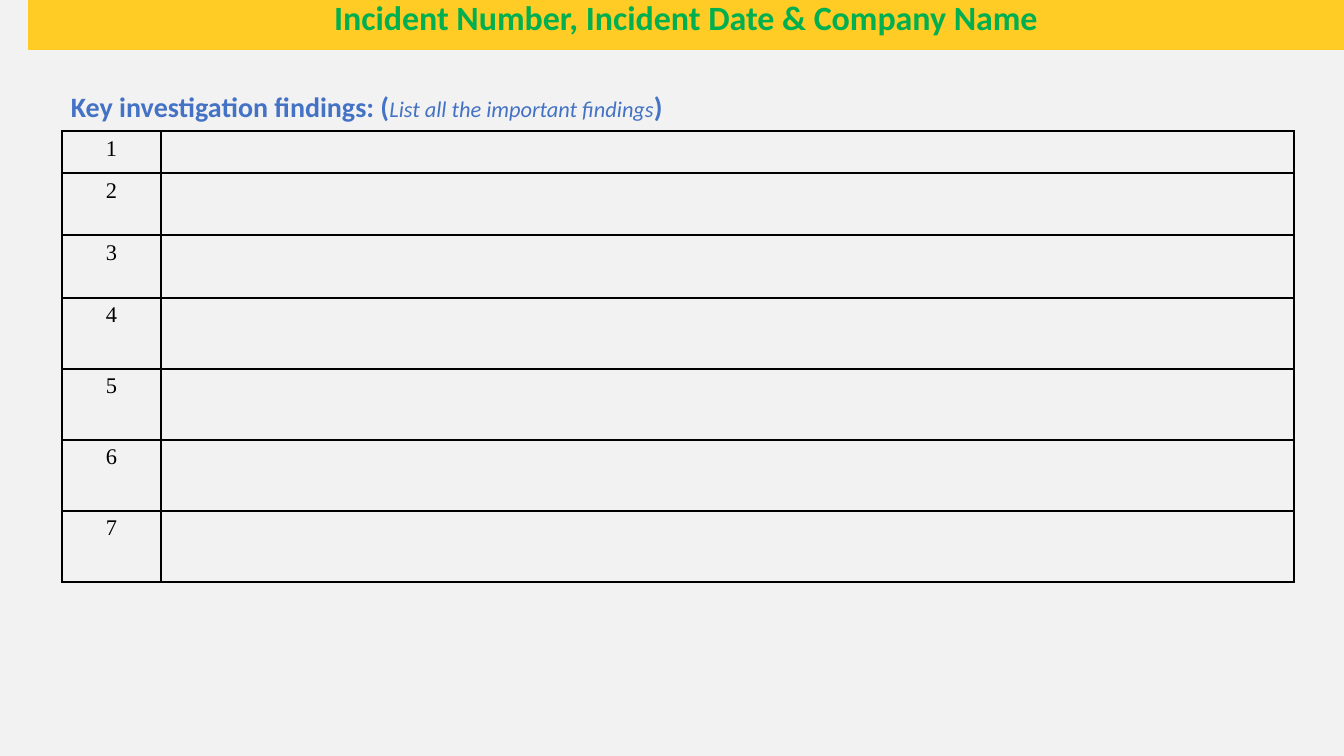
from lxml.etree import SubElement
from pptx import Presentation
from pptx.dml.color import RGBColor
from pptx.enum.shapes import MSO_SHAPE
from pptx.enum.text import MSO_ANCHOR, PP_ALIGN
from pptx.oxml import parse_xml
from pptx.oxml.ns import nsdecls
from pptx.util import Emu, Pt

SCALE = 914400 / 100.8


def px(length):
    return Emu(round(length * SCALE))


def add_span(para, text, color, **formats):
    span = para.add_run()
    span.text = text
    span.font.color.rgb = RGBColor.from_string(color)
    for name, value in formats.items():
        setattr(span.font, name, value)


deck = Presentation()
deck.slide_width, deck.slide_height = px(1344), px(756)
page = deck.slides.add_slide(deck.slide_layouts[6])
page.background.fill.solid()
page.background.fill.fore_color.rgb = RGBColor.from_string("F2F2F2")

# Title band
band = page.shapes.add_shape(MSO_SHAPE.RECTANGLE, px(28), 0, px(1316), px(50))
band.shadow.inherit = False
band.fill.solid()
band.fill.fore_color.rgb = RGBColor.from_string("FFCB25")
band.line.fill.background()
frame_format = {"word_wrap": True, "vertical_anchor": MSO_ANCHOR.MIDDLE,
                "margin_top": 0, "margin_bottom": px(10)}
for name, value in frame_format.items():
    setattr(band.text_frame, name, value)
para = band.text_frame.paragraphs[0]
para.alignment = PP_ALIGN.CENTER
para.line_spacing = 0.9
add_span(para, "Incident Number, Incident Date & Company Name", "00B050",
         name="Calibri", size=Pt(24.3), bold=True)

# Heading above the table
box = page.shapes.add_textbox(px(61), px(85), px(921), px(50))
box.text_frame.word_wrap = True
para = box.text_frame.paragraphs[0]
strong = {"size": Pt(20), "bold": True}
hint = {"size": Pt(16), "italic": True}
for text, formats in [("Key investigation findings: (", strong),
                      ("List all the important findings", hint),
                      (")", strong)]:
    add_span(para, text, "4472C4", name="Calibri", **formats)

# Findings table
column_widths = [99, 1133]
row_heights = [42, 62, 63] + [71] * 4
findings = page.shapes.add_table(
    len(row_heights), len(column_widths), px(62), px(131),
    px(sum(column_widths)), px(sum(row_heights))).table
findings.first_row = findings.horz_banding = False
for column, width in zip(findings.columns, column_widths):
    column.width = px(width)

for number, (row, height) in enumerate(zip(findings.rows, row_heights), 1):
    row.height = px(height)
    para = row.cells[0].text_frame.paragraphs[0]
    para.alignment = PP_ALIGN.CENTER
    add_span(para, str(number), "000000", name="Times New Roman", size=Pt(16))

    # Clear fill and black borders
    for cell in row.cells:
        cell.fill.background()
        properties = cell._tc.get_or_add_tcPr()
        for position, side in enumerate(["lnL", "lnR", "lnT", "lnB"]):
            border = parse_xml(f'<a:{side} {nsdecls("a")} w="{Pt(1.5)}"/>')
            fill = SubElement(border, border.tag.replace(side, "solidFill"))
            SubElement(fill, border.tag.replace(side, "srgbClr"), val="000000")
            properties.insert(position, border)

deck.save("out.pptx")
